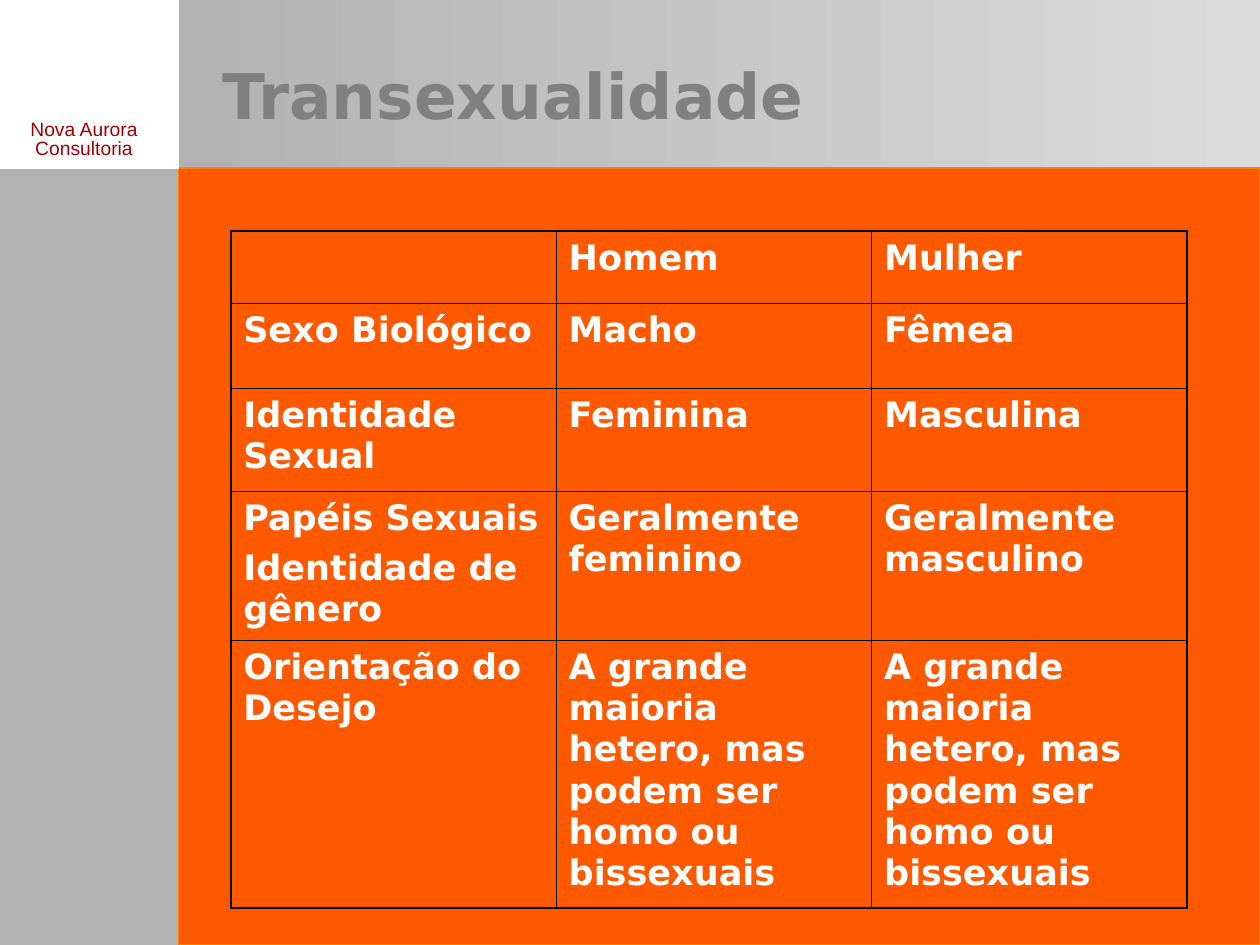
from dataclasses import dataclass
from typing import Optional

from lxml import etree
from pptx import Presentation
from pptx.dml.color import RGBColor
from pptx.enum.shapes import MSO_SHAPE
from pptx.enum.text import MSO_ANCHOR, MSO_AUTO_SIZE, PP_ALIGN
from pptx.oxml.ns import qn
from pptx.util import Cm, Pt

RECTANGLE = MSO_SHAPE.RECTANGLE
MIDDLE = MSO_ANCHOR.MIDDLE
LEFT, CENTER = PP_ALIGN.LEFT, PP_ALIGN.CENTER
NO_AUTOFIT = MSO_AUTO_SIZE.NONE
TITLE_ONLY = 5


@dataclass(frozen=True)
class Theme:
    white: str = "FFFFFF"
    gray: str = "B2B2B2"
    light_gray: str = "DBDBDB"
    title_gray: str = "808080"
    orange: str = "FF5900"
    orange_edge: str = "FF7D00"
    dark_red: str = "9E0000"
    black: str = "000000"
    heading_font: str = "DejaVu Sans"
    label_font: str = "Arial"
    title_size: float = 36
    table_size: float = 20
    label_size: float = 11
    panel_line: float = 0.75
    outer_border: float = 1.08
    inner_border: float = 0.45


@dataclass(frozen=True)
class Box:
    """Position and size in centimetres."""
    left: float
    top: float
    width: float
    height: float

    def lengths(self) -> tuple:
        return Cm(self.left), Cm(self.top), Cm(self.width), Cm(self.height)


@dataclass(frozen=True)
class Panel:
    box: Box
    fill: str
    line: Optional[str] = None
    gradient_end: Optional[str] = None


THEME = Theme()

# Page grid
PAGE_WIDTH, PAGE_HEIGHT = 25.4, 19.05
SIDE, HEADER = 3.6, 3.39
BODY_WIDTH, BODY_HEIGHT = PAGE_WIDTH - SIDE, PAGE_HEIGHT - HEADER

BACK_PANELS = [
    Panel(Box(SIDE, 0, BODY_WIDTH, PAGE_HEIGHT), THEME.light_gray, gradient_end=THEME.gray),
    Panel(Box(0, HEADER, SIDE, BODY_HEIGHT), THEME.gray, THEME.gray),
    Panel(Box(SIDE, HEADER, BODY_WIDTH, BODY_HEIGHT), THEME.orange, THEME.orange_edge),
]
CORNER_PANEL = Panel(Box(0, 0, SIDE, HEADER), THEME.white, THEME.white)

TITLE_BOX = Box(4.23, 0.85, 21.17, 2.12)
TABLE_BOX = Box(4.65, 4.66, 19.28, 13.65)
LABEL_BOX = Box(0, 2.33, 3.39, 1.02)

COLUMN_WIDTHS = [6.56, 6.36, 6.36]
ROW_HEIGHTS = [1.45, 1.71, 2.09, 3.0, 5.4]
DESIRE = "A grande maioria hetero, mas podem ser homo ou bissexuais"
TABLE_ROWS = [
    ["", "Homem", "Mulher"],
    ["Sexo Biológico", "Macho", "Fêmea"],
    ["Identidade Sexual", "Feminina", "Masculina"],
    ["Papéis Sexuais\nIdentidade de gênero", "Geralmente feminino", "Geralmente masculino"],
    ["Orientação do Desejo", DESIRE, DESIRE],
]

TITLE_FORMAT = {"name": THEME.heading_font, "size": Pt(THEME.title_size), "bold": True}
TABLE_FORMAT = {"name": THEME.heading_font, "size": Pt(THEME.table_size), "bold": True}
LABEL_FORMAT = {"name": THEME.label_font, "size": Pt(THEME.label_size), "bold": False}


def rgb(color: str) -> RGBColor:
    return RGBColor.from_string(color)


def write_text(text_frame, text: str, font_format: dict, color: str,
               alignment=LEFT, line_spacing: float = 1.0, gap: float = 0) -> None:
    """Write one paragraph per line, with the gap only between paragraphs."""
    text_frame.text = text
    for index, paragraph in enumerate(text_frame.paragraphs):
        paragraph.alignment = alignment
        paragraph.line_spacing = line_spacing
        paragraph.space_before = Pt(gap if index else 0)
        for attribute, value in font_format.items():
            setattr(paragraph.font, attribute, value)
        paragraph.font.color.rgb = rgb(color)


def draw_panel(slide, panel: Panel) -> None:
    shape = slide.shapes.add_shape(RECTANGLE, *panel.box.lengths())
    shape.shadow.inherit = False
    if panel.gradient_end:
        shape.fill.gradient()
        shape.fill.gradient_angle = 180
        for stop, color in zip(shape.fill.gradient_stops, (panel.fill, panel.gradient_end)):
            stop.color.rgb = rgb(color)
    else:
        shape.fill.solid()
        shape.fill.fore_color.rgb = rgb(panel.fill)
    if panel.line:
        shape.line.color.rgb = rgb(panel.line)
        shape.line.width = Pt(THEME.panel_line)
    else:
        shape.line.fill.background()


def draw_title(slide, text: str) -> None:
    title = slide.shapes.title
    title.left, title.top, title.width, title.height = TITLE_BOX.lengths()
    # Bring the title in front of the panels
    slide.shapes.element.append(title.element)
    text_frame = title.text_frame
    settings = {"vertical_anchor": MIDDLE, "auto_size": NO_AUTOFIT, "word_wrap": True}
    for attribute, value in settings.items():
        setattr(text_frame, attribute, value)
    write_text(text_frame, text, TITLE_FORMAT, THEME.title_gray)


def set_borders(cell, outer_edges: dict) -> None:
    properties = cell._tc.get_or_add_tcPr()
    for tag, is_outer in outer_edges.items():
        width = THEME.outer_border if is_outer else THEME.inner_border
        line = etree.SubElement(properties, qn(tag), w=str(Pt(width)))
        fill = etree.SubElement(line, qn("a:solidFill"))
        etree.SubElement(fill, qn("a:srgbClr"), val=THEME.black)


def draw_table(slide) -> None:
    last_row, last_column = len(ROW_HEIGHTS) - 1, len(COLUMN_WIDTHS) - 1
    frame = slide.shapes.add_table(last_row + 1, last_column + 1, *TABLE_BOX.lengths())
    table = frame.table
    table.first_row = table.horz_banding = False
    for column, width in zip(table.columns, COLUMN_WIDTHS):
        column.width = Cm(width)
    for row, height in zip(table.rows, ROW_HEIGHTS):
        row.height = Cm(height)
    for row_index, texts in enumerate(TABLE_ROWS):
        for column_index, text in enumerate(texts):
            cell = table.cell(row_index, column_index)
            set_borders(cell, {
                "a:lnL": column_index == 0,
                "a:lnR": column_index == last_column,
                "a:lnT": row_index == 0,
                "a:lnB": row_index == last_row,
            })
            cell.fill.background()
            write_text(cell.text_frame, text, TABLE_FORMAT, THEME.white,
                       line_spacing=1.01, gap=5)


def draw_label(slide, text: str) -> None:
    label = slide.shapes.add_textbox(*LABEL_BOX.lengths())
    label.text_frame.word_wrap = True
    write_text(label.text_frame, text, LABEL_FORMAT, THEME.dark_red, CENTER, 0.8)


def main() -> None:
    presentation = Presentation()
    presentation.slide_width, presentation.slide_height = Cm(PAGE_WIDTH), Cm(PAGE_HEIGHT)
    slide = presentation.slides.add_slide(presentation.slide_layouts[TITLE_ONLY])

    # Background and title
    for panel in BACK_PANELS:
        draw_panel(slide, panel)
    draw_title(slide, "Transexualidade")

    # Comparison table
    draw_table(slide)

    # Corner with the label
    draw_panel(slide, CORNER_PANEL)
    draw_label(slide, "Nova Aurora\nConsultoria")

    presentation.save("out.pptx")


if __name__ == "__main__":
    main()
